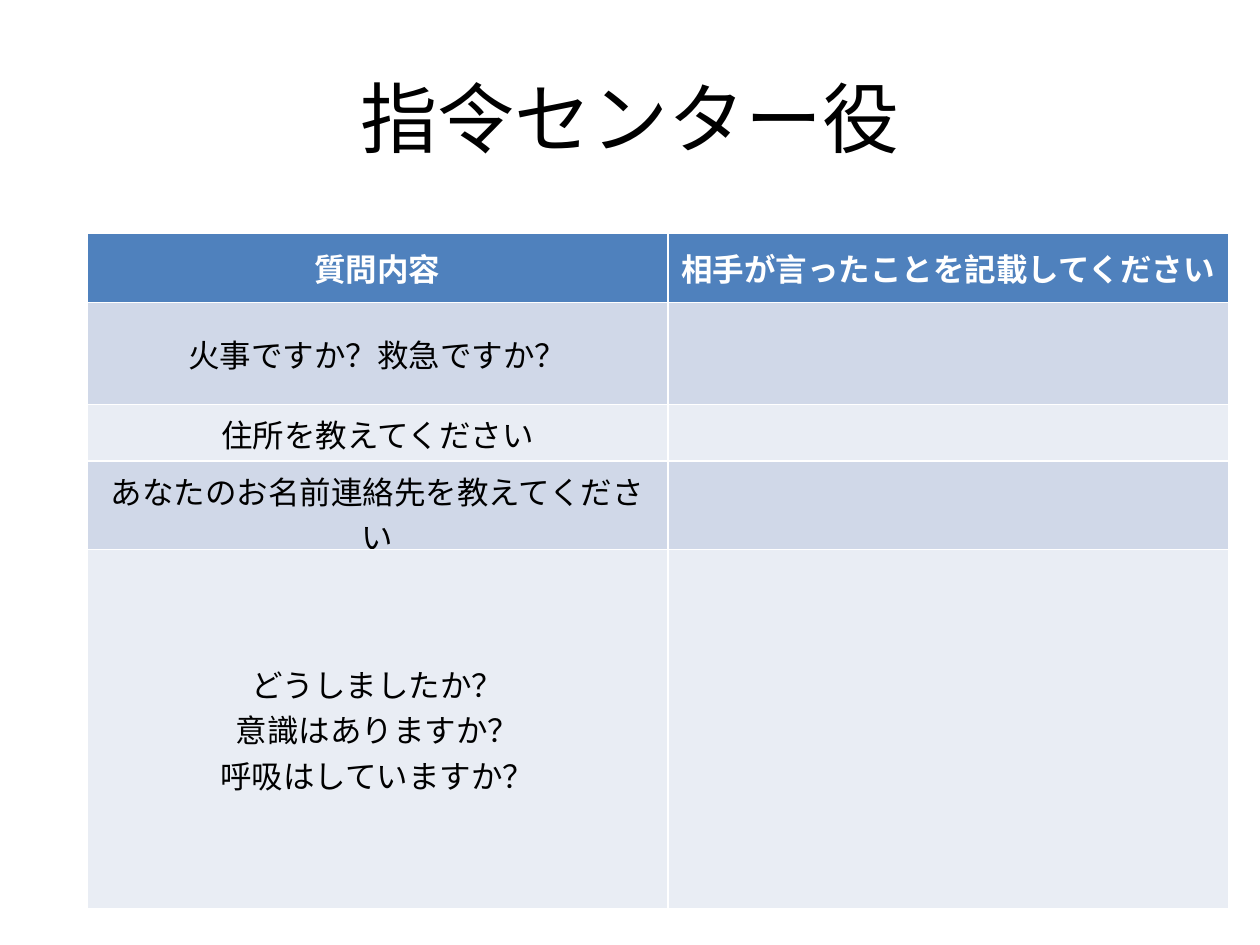
from pptx import Presentation
from pptx.dml.color import RGBColor
from pptx.enum.text import MSO_ANCHOR, PP_ALIGN
from pptx.util import Inches, Pt

WHITE = RGBColor(0xFF, 0xFF, 0xFF)
BLACK = RGBColor(0x00, 0x00, 0x00)
HEADER_BLUE = RGBColor(0x4F, 0x81, 0xBD)
BANDS = [RGBColor(0xE9, 0xED, 0xF4), RGBColor(0xD0, 0xD8, 0xE8)]

COLUMN_WIDTHS = [4.61, 4.45]
ROW_HEIGHTS = [0.55, 0.81, 0.45, 0.7, 2.85]
ROWS = [
    ("質問内容", "相手が言ったことを記載してください"),
    ("火事ですか？救急ですか？", ""),
    ("住所を教えてください", ""),
    ("あなたのお名前連絡先を教えてください", ""),
    ("どうしましたか？\n意識はありますか？\n呼吸はしていますか？", ""),
]


def style_text(frame, size, color, bold=False):
    for paragraph in frame.paragraphs:
        paragraph.alignment = PP_ALIGN.CENTER
        paragraph.font.name = "Calibri"
        paragraph.font.size = Pt(size)
        paragraph.font.bold = bold
        paragraph.font.color.rgb = color


prs = Presentation()
prs.slide_width, prs.slide_height = Inches(10), Inches(7.5)
slide = prs.slides.add_slide(prs.slide_layouts[6])

title = slide.shapes.add_textbox(Inches(0.5), Inches(0.3), Inches(9), Inches(1.25)).text_frame
title.word_wrap = True
title.vertical_anchor = MSO_ANCHOR.MIDDLE
title.text = "指令センター役"
style_text(title, 44, BLACK)

# The default table style supplies the white rules, thicker below the header.
questions = slide.shapes.add_table(
    len(ROWS), len(COLUMN_WIDTHS), Inches(0.69), Inches(1.85),
    Inches(sum(COLUMN_WIDTHS)), Inches(sum(ROW_HEIGHTS))).table
for column, width in zip(questions.columns, COLUMN_WIDTHS):
    column.width = Inches(width)

for r, (texts, height) in enumerate(zip(ROWS, ROW_HEIGHTS)):
    questions.rows[r].height = Inches(height)
    is_header = r == 0
    for c, text in enumerate(texts):
        cell = questions.cell(r, c)
        cell.fill.solid()
        cell.fill.fore_color.rgb = HEADER_BLUE if is_header else BANDS[r % 2]
        cell.vertical_anchor = MSO_ANCHOR.MIDDLE
        cell.text = text
        style_text(cell.text_frame, 18, WHITE if is_header else BLACK, is_header)

prs.save("out.pptx")
